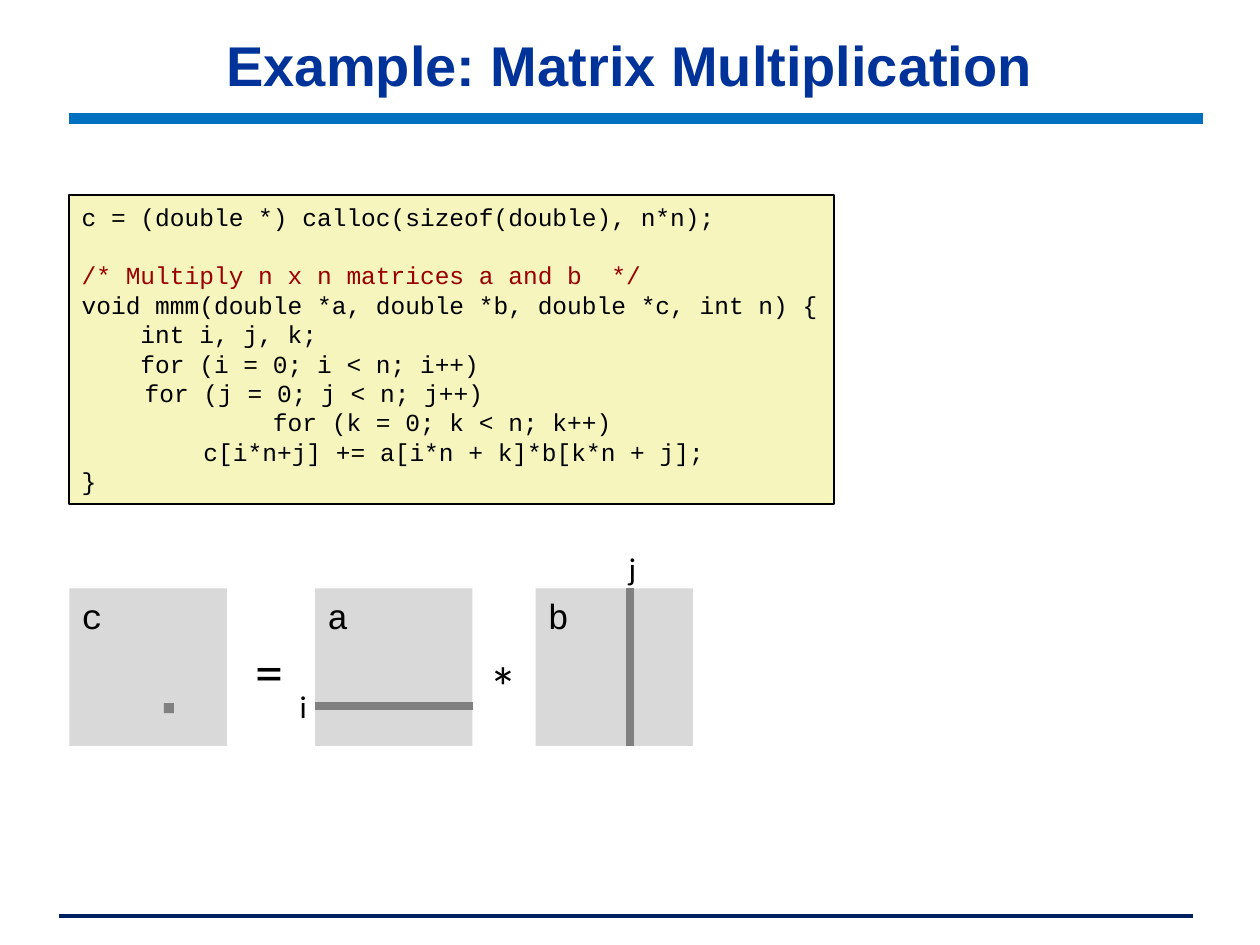
from dataclasses import dataclass

from lxml import etree
from pptx import Presentation
from pptx.dml.color import RGBColor
from pptx.enum.shapes import MSO_CONNECTOR, MSO_SHAPE
from pptx.enum.text import MSO_ANCHOR, MSO_AUTO_SIZE, PP_ALIGN
from pptx.oxml.ns import qn
from pptx.util import Inches, Pt

RECTANGLE = MSO_SHAPE.RECTANGLE
STRAIGHT = MSO_CONNECTOR.STRAIGHT
TOP, MIDDLE = MSO_ANCHOR.TOP, MSO_ANCHOR.MIDDLE
LEFT, CENTER = PP_ALIGN.LEFT, PP_ALIGN.CENTER
TITLE_ONLY = 5


@dataclass(frozen=True)
class Theme:
    heading_font: str = "Arial"
    code_font: str = "Courier New"
    label_font: str = "Calibri"
    title: str = "003399"
    header_rule: str = "0070C0"
    footer_rule: str = "002060"
    text: str = "000000"
    comment: str = "990000"
    code_fill: str = "F6F5BD"
    matrix: str = "D9D9D9"
    highlight: str = "808080"
    title_size: int = 32
    operator_size: int = 32
    matrix_size: int = 20
    label_size: int = 18
    code_size: int = 14


@dataclass(frozen=True)
class Matrix:
    name: str
    left: float


@dataclass(frozen=True)
class Label:
    text: str
    left: float
    top: float
    width: float
    height: float
    size: int


@dataclass(frozen=True)
class Rule:
    start: tuple[float, float]
    end: tuple[float, float]
    color: str
    width: float


THEME = Theme()
MARGIN, RULE_LENGTH = 0.55, 9
MATRIX_TOP, MATRIX_SIDE = 4.67, 1.25
MATRIX_C, MATRIX_A, MATRIX_B = MATRICES = (
    Matrix("c", MARGIN), Matrix("a", 2.5), Matrix("b", 4.25))
ROW_I, COLUMN_J = 5.6, 5

PAGE_RULES = (
    Rule((0.47, 7.27), (0.47 + RULE_LENGTH, 7.27), THEME.footer_rule, 2.25),
    Rule((MARGIN, 0.94), (MARGIN + RULE_LENGTH, 0.94), THEME.header_rule, 6),
)
HIGHLIGHTS = (
    Rule((MATRIX_A.left, ROW_I), (MATRIX_A.left + MATRIX_SIDE, ROW_I),
         THEME.highlight, 4.5),
    Rule((COLUMN_J, MATRIX_TOP), (COLUMN_J, MATRIX_TOP + MATRIX_SIDE),
         THEME.highlight, 4.5),
)
LABELS = (
    Label("i", 2.28, 5.4, 0.26, 0.4, THEME.label_size),
    Label("j", 4.89, 4.31, 0.27, 0.4, THEME.label_size),
    Label("*", 3.79, 5.12, 0.43, 0.64, THEME.operator_size),
    Label("=", 1.93, 5, 0.43, 0.64, THEME.operator_size),
)
CODE = """c = (double *) calloc(sizeof(double), n*n);

/* Multiply n x n matrices a and b  */
void mmm(double *a, double *b, double *c, int n) {
    int i, j, k;
    for (i = 0; i < n; i++)
\tfor (j = 0; j < n; j++)
             for (k = 0; k < n; k++)
\t    c[i*n+j] += a[i*n + k]*b[k*n + j];
}"""


def write_text(shape, text: str, *, font: str, size: int, color: str = THEME.text,
               bold: bool = False, align=LEFT, anchor=TOP, wrap: bool = True,
               fit=MSO_AUTO_SIZE.NONE) -> None:
    """Fill a shape with one paragraph per line; comment lines take their own colour."""
    frame = shape.text_frame
    frame.word_wrap = wrap
    frame.auto_size = fit
    frame.vertical_anchor = anchor
    frame.text = text
    for paragraph in frame.paragraphs:
        paragraph.alignment = align
        paragraph.font.size = Pt(size)
        paragraph.font.name = font
        for run in paragraph.runs:
            run.font.name = font
            run.font.size = Pt(size)
            run.font.bold = bold
            run_color = THEME.comment if run.text.startswith("/*") else color
            run.font.color.rgb = RGBColor.from_string(run_color)


def add_rule(slide, rule: Rule) -> None:
    points = (Inches(value) for value in (*rule.start, *rule.end))
    connector = slide.shapes.add_connector(STRAIGHT, *points)
    connector.line.color.rgb = RGBColor.from_string(rule.color)
    connector.line.width = Pt(rule.width)
    properties = connector._element.spPr
    etree.SubElement(properties, qn("a:effectLst"))


def add_box(slide, left: float, top: float, width: float, height: float,
            fill: str, line: str | None = None):
    box = slide.shapes.add_shape(
        RECTANGLE, Inches(left), Inches(top), Inches(width), Inches(height))
    box.shadow.inherit = False
    box.fill.solid()
    box.fill.fore_color.rgb = RGBColor.from_string(fill)
    if line:
        box.line.color.rgb = RGBColor.from_string(line)
        box.line.width = Pt(1)
    else:
        box.line.fill.background()
    return box


def add_matrix(slide, matrix: Matrix) -> None:
    box = add_box(slide, matrix.left, MATRIX_TOP, MATRIX_SIDE, MATRIX_SIDE, THEME.matrix)
    write_text(box, matrix.name, font=THEME.code_font, size=THEME.matrix_size)


def add_label(slide, label: Label) -> None:
    box = slide.shapes.add_textbox(Inches(label.left), Inches(label.top),
                                   Inches(label.width), Inches(label.height))
    write_text(box, label.text, font=THEME.label_font, size=label.size,
               wrap=False, fit=MSO_AUTO_SIZE.SHAPE_TO_FIT_TEXT)


def add_title(slide, text: str) -> None:
    title = slide.shapes.title
    title.left, title.top = Inches(0.5), Inches(0.16)
    title.width, title.height = Inches(9), Inches(0.7)
    write_text(title, text, font=THEME.heading_font, size=THEME.title_size,
               color=THEME.title, bold=True, align=CENTER, anchor=MIDDLE)


def main() -> None:
    presentation = Presentation()
    presentation.slide_width, presentation.slide_height = Inches(10), Inches(7.5)
    slide = presentation.slides.add_slide(presentation.slide_layouts[TITLE_ONLY])

    for rule in PAGE_RULES:
        add_rule(slide, rule)
    add_title(slide, "Example: Matrix Multiplication")
    for matrix in MATRICES:
        add_matrix(slide, matrix)
    for rule in HIGHLIGHTS:
        add_rule(slide, rule)
    for label in LABELS:
        add_label(slide, label)
    add_box(slide, 1.3, 5.58, 0.08, 0.08, THEME.highlight)

    code = add_box(slide, MARGIN, 1.55, 6.07, 2.45, THEME.code_fill, THEME.text)
    write_text(code, CODE, font=THEME.code_font, size=THEME.code_size,
               wrap=False, fit=MSO_AUTO_SIZE.SHAPE_TO_FIT_TEXT)
    presentation.save("out.pptx")


if __name__ == "__main__":
    main()
